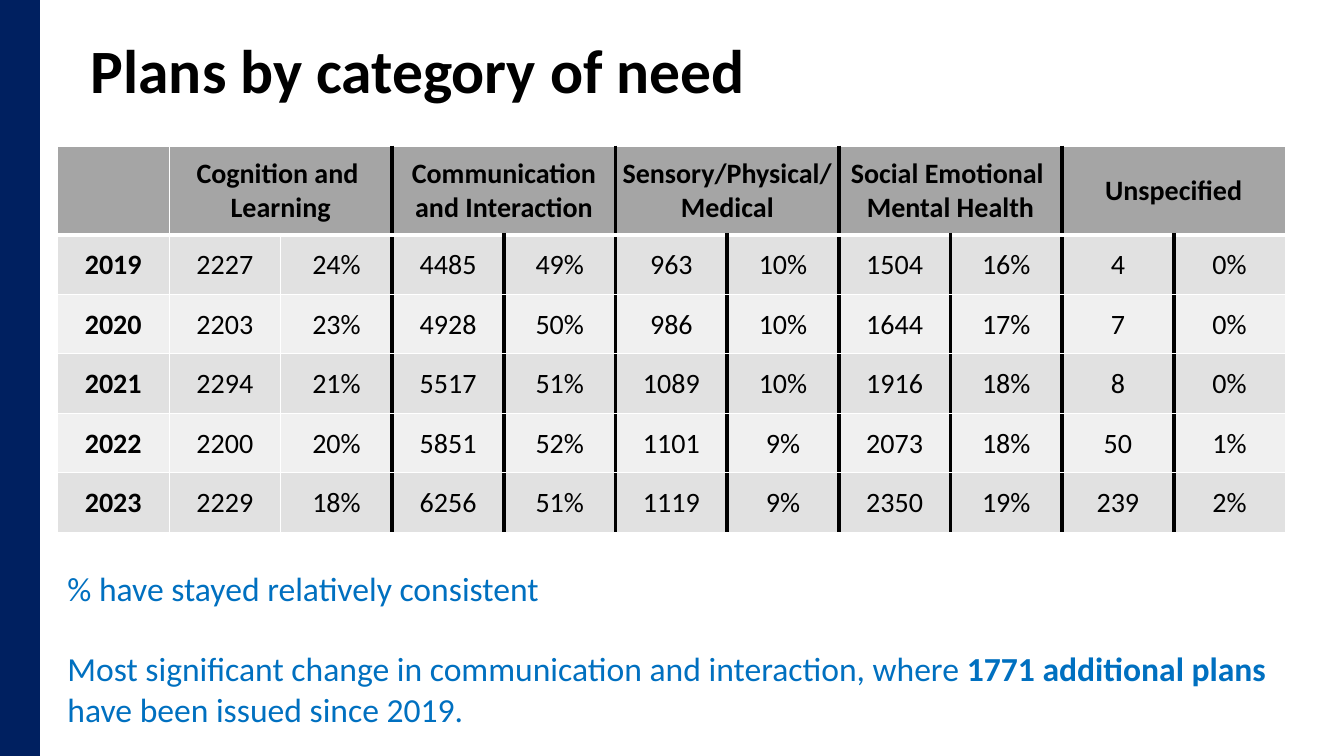
from lxml.etree import SubElement
from pptx import Presentation
from pptx.dml.color import RGBColor
from pptx.enum.shapes import MSO_SHAPE
from pptx.enum.text import MSO_ANCHOR, PP_ALIGN
from pptx.oxml.ns import qn
from pptx.util import Inches, Pt

# Content
TITLE = "Plans by category of need"
NEEDS = [
    ["Cognition and ", "Learning"],
    ["Communication and Interaction"],
    ["Sensory/Physical/", "Medical"],
    ["Social Emotional ", "Mental Health"],
    ["Unspecified"],
]
PLANS = [
    ("2019", "2227", "24%", "4485", "49%", "963", "10%", "1504", "16%", "4", "0%"),
    ("2020", "2203", "23%", "4928", "50%", "986", "10%", "1644", "17%", "7", "0%"),
    ("2021", "2294", "21%", "5517", "51%", "1089", "10%", "1916", "18%", "8", "0%"),
    ("2022", "2200", "20%", "5851", "52%", "1101", "9%", "2073", "18%", "50", "1%"),
    ("2023", "2229", "18%", "6256", "51%", "1119", "9%", "2350", "19%", "239", "2%"),
]
NOTES = [
    [("% have stayed relatively consistent", False)],
    [("Most significant change in communication and interaction, where ", False),
     ("1771 additional plans ", True),
     ("have been issued since 2019.", False)],
]

# Style
FONT = "Calibri"
BLACK, WHITE, NAVY, BLUE = "000000", "FFFFFF", "002060", "0070C0"
HEAD, BANDS = "A5A5A5", ("E1E1E1", "F0F0F0")
LEFT, WIDTH = 0.57, 12.18
TOP, HEAD_H, ROW_H = 1.45, 0.88, 0.59
COLS, ROWS = len(PLANS[0]), len(PLANS) + 1


def color(code):
    return RGBColor.from_string(code)


def add_run(para, text, size, code=BLACK, bold=False):
    run = para.add_run()
    run.text = text
    font = run.font
    font.name, font.size, font.bold = FONT, Pt(size), bold
    font.color.rgb = color(code)


def fill_cell(cell, lines, code, bold):
    cell.fill.solid()
    cell.fill.fore_color.rgb = color(code)
    cell.vertical_anchor = MSO_ANCHOR.MIDDLE
    cell.margin_left = cell.margin_right = cell.margin_top = Inches(0.01)
    cell.margin_bottom = 0
    para = cell.text_frame.paragraphs[0]
    para.alignment = PP_ALIGN.CENTER
    for i, line in enumerate(lines):
        if i:
            para.add_line_break()
        add_run(para, line, 20, bold=bold)


def add_edge(cell, side, code, width):
    line = SubElement(cell._tc.get_or_add_tcPr(), qn(f"a:ln{side}"), w=str(Pt(width)))
    solid = SubElement(line, qn("a:solidFill"))
    SubElement(solid, qn("a:srgbClr"), val=code)


def upright(col):
    """Colour and width of the vertical edge left of a column."""
    return (BLACK, 3) if 3 <= col < COLS else (WHITE, 1)


prs = Presentation()
prs.slide_width, prs.slide_height = Inches(13.33), Inches(7.5)
slide = prs.slides.add_slide(prs.slide_layouts[5])

# Title
title = slide.shapes.title
title.left, title.top = Inches(0.8), Inches(0)
title.width, title.height = Inches(11.5), Inches(1.45)
title.text_frame.vertical_anchor = MSO_ANCHOR.MIDDLE
para = title.text_frame.paragraphs[0]
para.alignment, para.line_spacing = PP_ALIGN.LEFT, 0.9
add_run(para, TITLE, 44, bold=True)

# Table grid
table = slide.shapes.add_table(
    ROWS, COLS, Inches(LEFT), Inches(TOP), Inches(WIDTH),
    Inches(HEAD_H + ROW_H * len(PLANS))).table
for col in table.columns:
    col.width = Inches(WIDTH / COLS)
for r, row in enumerate(table.rows):
    row.height = Inches(ROW_H if r else HEAD_H)

# Borders: a merged heading ends two columns on
for r in range(ROWS):
    for c in range(COLS):
        cell = table.cell(r, c)
        end = c + 2 if r == 0 and c % 2 else c + 1
        add_edge(cell, "L", *upright(c))
        add_edge(cell, "R", *upright(end))
        add_edge(cell, "T", WHITE, 1)
        add_edge(cell, "B", WHITE, 1 if r else 3)

# Headings
fill_cell(table.cell(0, 0), [], HEAD, True)
for i, need in enumerate(NEEDS):
    cell = table.cell(0, 2 * i + 1)
    cell.merge(table.cell(0, 2 * i + 2))
    fill_cell(cell, need, HEAD, True)

# Yearly figures
for r, plan in enumerate(PLANS):
    for c, value in enumerate(plan):
        fill_cell(table.cell(r + 1, c), [value], BANDS[r % 2], c == 0)

# Notes
box = slide.shapes.add_textbox(Inches(LEFT), Inches(5.58), Inches(WIDTH), Inches(1.72))
frame = box.text_frame
frame.word_wrap = True
for i, note in enumerate(NOTES):
    para = frame.add_paragraph() if i else frame.paragraphs[0]
    para.space_before = Pt(29 if i else 0)
    for text, bold in note:
        add_run(para, text, 24, BLUE, bold)

# Side band
band = slide.shapes.add_shape(MSO_SHAPE.RECTANGLE, 0, 0, Inches(0.39), prs.slide_height)
band.shadow.inherit = False
band.fill.solid()
band.fill.fore_color.rgb = color(NAVY)
band.line.color.rgb = color(NAVY)
band.line.width = Pt(1)

prs.save("out.pptx")
